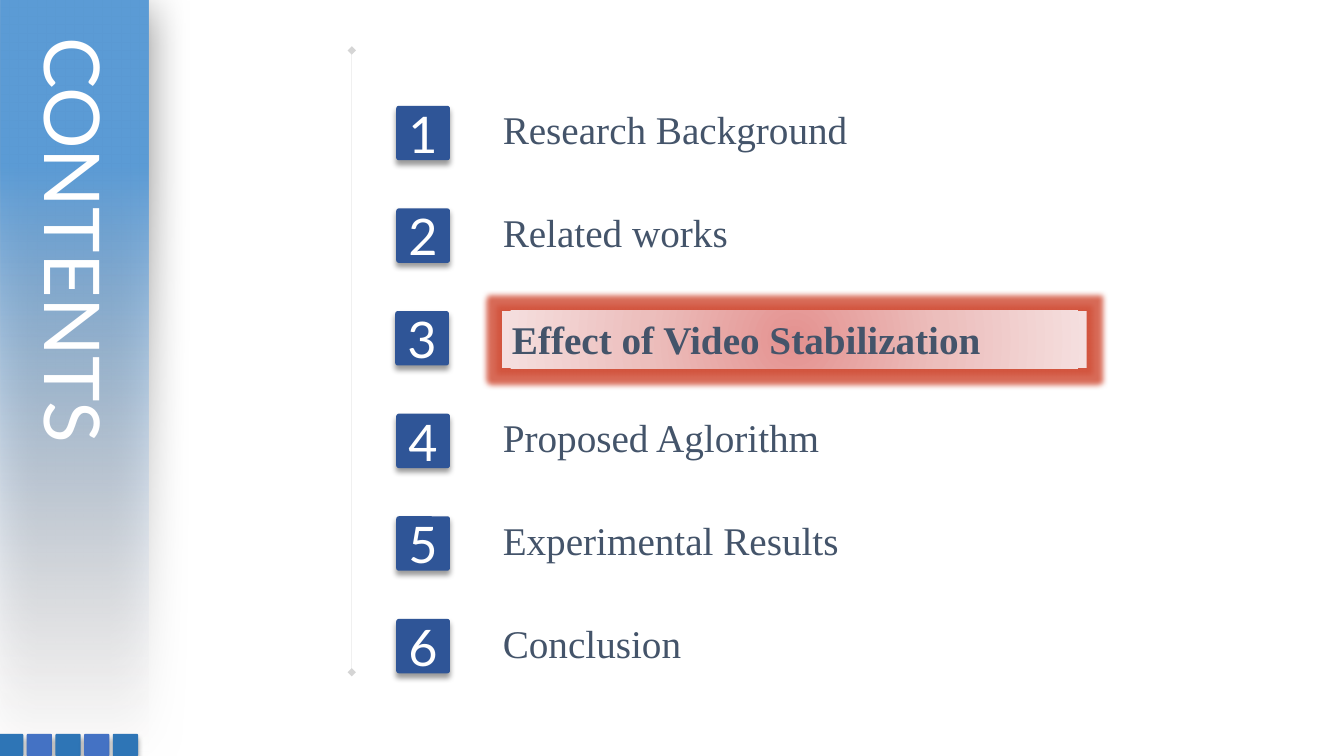
from pptx import Presentation
from pptx.dml.color import RGBColor
from pptx.enum.shapes import MSO_CONNECTOR as Connector, MSO_SHAPE as Shape
from pptx.enum.text import MSO_ANCHOR as Anchor, MSO_AUTO_SIZE as AutoSize, PP_ALIGN as Align
from pptx.oxml import parse_xml
from pptx.oxml.ns import nsdecls, qn
from pptx.util import Pt

COLORS = {
    "band": "5B9BD5", "band_end": "FEF2F0", "tile": "2F5597",
    "square": "2E75B6", "square_alt": "4472C4", "rule": "808080",
    "text": "44546A", "white": "FFFFFF", "black": "000000",
    "glow": "D2523B", "center": "E49290", "middle": "ECBEBC", "edge": "F5DFDF",
}
TOPICS = ["Research Background", "Related works", "Effect of Video Stabilization",
          "Proposed Aglorithm", "Experimental Results", "Conclusion"]
CURRENT = 2
TITLE = {"size": Pt(55), "name": "Lato", "color": "white"}
NUMBER = {"size": Pt(36), "name": "Lato", "color": "white"}
TOPIC = {"size": Pt(28), "name": "Times New Roman", "color": "text"}


def rgb(name):
    return RGBColor.from_string(COLORS[name])


def xml_color(name, alpha=100):
    return f'<a:srgbClr val="{COLORS[name]}"><a:alpha val="{alpha * 1000}"/></a:srgbClr>'


def add_xml(parent, tag, attributes="", content=""):
    parent.append(parse_xml(f'<a:{tag} {nsdecls("a")} {attributes}>{content}</a:{tag}>'))


def add_block(slide, kind, left, top, width, height, fill=None):
    shape = slide.shapes.add_shape(kind, Pt(left), Pt(top), Pt(width), Pt(height))
    shape.shadow.inherit = False
    shape.line.fill.background()
    if fill:
        shape.fill.solid()
        shape.fill.fore_color.rgb = rgb(fill)
    else:
        shape.fill.background()
    return shape


def add_effect(shape, tag, attributes, color):
    add_xml(shape._element.spPr.find(qn("a:effectLst")), tag, attributes, color)


def add_shadow(shape, alpha, blur, distance, angle):
    add_effect(shape, "outerShdw",
               f'blurRad="{Pt(blur)}" dist="{Pt(distance)}" dir="{angle * 60000}" '
               'algn="ctr" rotWithShape="0"', xml_color("black", alpha))


def set_gradient(shape, stops, direction):
    stop_xml = "".join(f'<a:gs pos="{position * 1000}">{xml_color(name, alpha)}</a:gs>'
                       for position, name, alpha in stops)
    properties = shape._element.spPr
    gradient = parse_xml(f'<a:gradFill {nsdecls("a")} rotWithShape="1">'
                         f'<a:gsLst>{stop_xml}</a:gsLst>{direction}</a:gradFill>')
    properties.replace(properties.find(qn("a:noFill")), gradient)


def add_rounded(slide, left, top, width, height, fill):
    shape = add_block(slide, Shape.ROUNDED_RECTANGLE, left, top, width, height, fill)
    shape.adjustments[0] = 0.05
    add_shadow(shape, 40, 4, 3, 90)
    return shape


def write(shape, text, style, align=Align.LEFT, bold=False, **frame_format):
    frame = shape.text_frame
    settings = {"word_wrap": True, "vertical_anchor": Anchor.TOP, **frame_format}
    for name, value in settings.items():
        setattr(frame, name, value)
    paragraph = frame.paragraphs[0]
    paragraph.alignment = align
    run = paragraph.add_run()
    run.text = text
    for name, value in {"size": style["size"], "name": style["name"], "bold": bold}.items():
        setattr(run.font, name, value)
    run.font.color.rgb = rgb(style["color"])


def add_side_band(slide, left, top, width, height):
    # Fading band, a wide rectangle turned upright
    band = add_block(slide, Shape.RECTANGLE, left + (width - height) / 2,
                     top + (height - width) / 2, height, width)
    band.rotation = 90
    set_gradient(band, [(0, "band_end", 0), (78, "band", 100)],
                 '<a:lin ang="10800000" scaled="0"/>')
    add_shadow(band, 50, 31, 6, 97)

    # Row of small squares at the foot
    for index in range(5):
        add_rounded(slide, left - 1.4 + 20.5 * index, top + 524.2, 18, 15.8,
                    "square_alt" if index % 2 else "square")

    # Vertical heading
    heading = slide.shapes.add_textbox(Pt(left + 8.6), Pt(top + 19.4), Pt(81.4), Pt(355.7))
    write(heading, "CONTENTS", TITLE)
    heading.text_frame._txBody.bodyPr.set("vert", "eaVert")


def add_rule(slide, left, top, height):
    rule = slide.shapes.add_connector(Connector.STRAIGHT, Pt(left), Pt(top),
                                      Pt(left), Pt(top + height))
    rule.line.width = Pt(0.25)
    rule.line.color.rgb = rgb("rule")
    line = rule.line._get_or_add_ln()
    add_xml(line.find(".//" + qn("a:srgbClr")), "alpha", 'val="33000"')
    for end in ("headEnd", "tailEnd"):
        add_xml(line, end, 'type="diamond"')
    add_xml(rule._element.spPr, "effectLst")


def add_highlight(slide, left, top, width, height):
    shape = add_block(slide, Shape.RECTANGLE, left, top, width, height)
    set_gradient(shape, [(0, "center", 100), (50, "middle", 100), (100, "edge", 100)],
                 '<a:path path="circle"><a:fillToRect l="50000" t="50000" '
                 'r="50000" b="50000"/></a:path>')
    add_effect(shape, "glow", f'rad="{Pt(8)}"', xml_color("glow", 85))
    return shape


def add_topics(slide, left, top, pitch):
    for index, topic in enumerate(TOPICS):
        row_top = top + pitch * index
        current = index == CURRENT
        # Number tile
        tile = add_rounded(slide, left - (0.7 if current else 0), row_top + 3.6,
                           38.4, 38.9, "tile")
        write(tile, str(index + 1), NUMBER, Align.CENTER, vertical_anchor=Anchor.MIDDLE)
        # Topic name
        if current:
            label = add_highlight(slide, left + 75.6, row_top + 3.2, 417.6, 41.2)
        else:
            label = slide.shapes.add_textbox(Pt(left + 69.1), Pt(row_top), Pt(285), Pt(41.2))
        write(label, topic, TOPIC, bold=current, word_wrap=current,
              auto_size=AutoSize.SHAPE_TO_FIT_TEXT)


def main():
    presentation = Presentation()
    presentation.slide_width, presentation.slide_height = Pt(960), Pt(540)
    slide = presentation.slides.add_slide(presentation.slide_layouts[6])
    add_rule(slide, 251.3, 36, 444.2)
    add_side_band(slide, 0, 0, 105.8, 537.1)
    add_topics(slide, 283, 72, 73.3)
    presentation.save("out.pptx")


if __name__ == "__main__":
    main()
